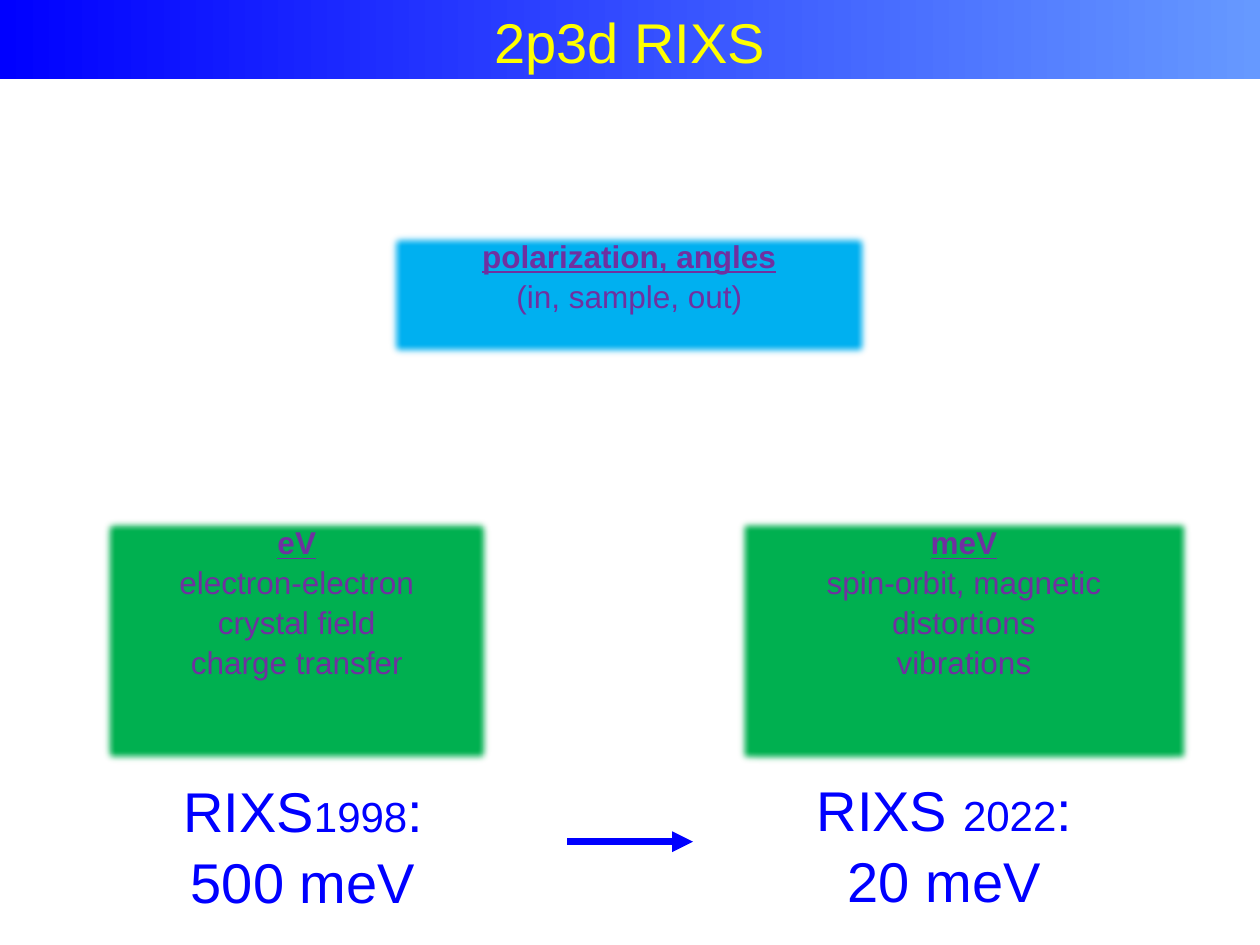
from dataclasses import dataclass

import pptx
import pptx.dml.color
import pptx.enum.shapes
import pptx.enum.text
import pptx.oxml
import pptx.oxml.ns
import pptx.util
from pptx.util import Pt

BLUE = "0000FF"
PURPLE = "7030A0"
GREEN = "00B050"
SKY = "00B0F0"
YELLOW = "FFFF00"
SOFT_EDGE = 5


@dataclass(frozen=True)
class Box:
    left: float
    top: float
    width: float
    height: float

    def lengths(self) -> tuple:
        return Pt(self.left), Pt(self.top), Pt(self.width), Pt(self.height)


@dataclass(frozen=True)
class Topic:
    box: Box
    fill: str
    heading: str
    lines: tuple[str, ...]


@dataclass(frozen=True)
class Resolution:
    box: Box
    method: str
    year: str
    value: str


TOPICS = (
    Topic(Box(56.9, 294.5, 225.4, 143.3), GREEN, "eV",
          ("electron-electron", "crystal field", "charge transfer")),
    Topic(Box(220.3, 131, 278.6, 74.9), SKY, "polarization, angles",
          ("(in, sample, out)",)),
    Topic(Box(419.8, 294.5, 262.1, 143.3), GREEN, "meV",
          ("spin-orbit, magnetic", "distortions", "vibrations")),
)
RESOLUTIONS = (
    Resolution(Box(458.6, 437.8, 162, 85), "RIXS ", "2022", "20 meV"),
    Resolution(Box(96.5, 438.5, 153.4, 85), "RIXS", "1998", "500 meV"),
)


def color(hex_code: str) -> pptx.dml.color.RGBColor:
    return pptx.dml.color.RGBColor.from_string(hex_code)


def add_text(paragraph, text: str, *, size: float, hex_code: str,
             bold: bool = False, underline: bool = False) -> None:
    run = paragraph.add_run()
    run.text = text
    font = run.font
    font.name = "Arial"
    font.size = Pt(size)
    font.bold = bold
    font.underline = underline
    font.color.rgb = color(hex_code)


def centre_paragraph(paragraph) -> None:
    paragraph.alignment = pptx.enum.text.PP_ALIGN.CENTER
    paragraph.line_spacing = 1.05


def add_rectangle(slide, box: Box):
    shape = slide.shapes.add_shape(
        pptx.enum.shapes.MSO_SHAPE.RECTANGLE, *box.lengths())
    shape.shadow.inherit = False
    shape.line.fill.background()
    return shape


def soften_edges(shape) -> None:
    effects = shape._element.spPr.find(pptx.oxml.ns.qn("a:effectLst"))
    effects.append(pptx.oxml.parse_xml(
        f'<a:softEdge {pptx.oxml.ns.nsdecls("a")} rad="{Pt(SOFT_EDGE)}"/>'))


def draw_title(slide) -> None:
    shape = add_rectangle(slide, Box(0, 0, 720, 45.4))
    shape.fill.gradient()
    shape.fill.gradient_angle = 0
    for stop, hex_code in zip(shape.fill.gradient_stops, (BLUE, "6699FF")):
        stop.color.rgb = color(hex_code)
    frame = shape.text_frame
    frame.vertical_anchor = pptx.enum.text.MSO_ANCHOR.MIDDLE
    paragraph = frame.paragraphs[0]
    centre_paragraph(paragraph)
    add_text(paragraph, "2p3d RIXS", size=32, hex_code=YELLOW)


def draw_topic(slide, topic: Topic) -> None:
    shape = add_rectangle(slide, topic.box)
    shape.fill.solid()
    shape.fill.fore_color.rgb = color(topic.fill)
    soften_edges(shape)
    frame = shape.text_frame
    frame.word_wrap = False
    frame.vertical_anchor = pptx.enum.text.MSO_ANCHOR.TOP
    for index, line in enumerate((topic.heading, *topic.lines)):
        is_heading = index == 0
        paragraph = frame.paragraphs[0] if is_heading else frame.add_paragraph()
        centre_paragraph(paragraph)
        add_text(paragraph, line, size=18, hex_code=PURPLE,
                 bold=is_heading, underline=is_heading)


def draw_resolution(slide, resolution: Resolution) -> None:
    frame = slide.shapes.add_textbox(*resolution.box.lengths()).text_frame
    frame.word_wrap = False
    paragraph = frame.paragraphs[0]
    centre_paragraph(paragraph)
    add_text(paragraph, resolution.method, size=32, hex_code=BLUE)
    add_text(paragraph, resolution.year, size=24, hex_code=BLUE)
    add_text(paragraph, ":", size=32, hex_code=BLUE)
    paragraph.add_line_break()
    add_text(paragraph, resolution.value, size=32, hex_code=BLUE)


def draw_arrow(slide) -> None:
    arrow = slide.shapes.add_connector(
        pptx.enum.shapes.MSO_CONNECTOR.STRAIGHT,
        Pt(324), Pt(481), Pt(396), Pt(481))
    arrow.line.color.rgb = color(BLUE)
    arrow.line.width = Pt(4)
    namespace = pptx.oxml.ns.nsdecls("a")
    arrow.line._get_or_add_ln().append(
        pptx.oxml.parse_xml(f'<a:tailEnd {namespace} type="triangle"/>'))
    arrow._element.spPr.append(
        pptx.oxml.parse_xml(f"<a:effectLst {namespace}/>"))


def main() -> None:
    presentation = pptx.Presentation()
    presentation.slide_width = Pt(720)
    presentation.slide_height = Pt(540)
    slide = presentation.slides.add_slide(presentation.slide_layouts[6])
    draw_title(slide)
    for topic in TOPICS:
        draw_topic(slide, topic)
    for resolution in RESOLUTIONS:
        draw_resolution(slide, resolution)
    draw_arrow(slide)
    presentation.save("out.pptx")


if __name__ == "__main__":
    main()
